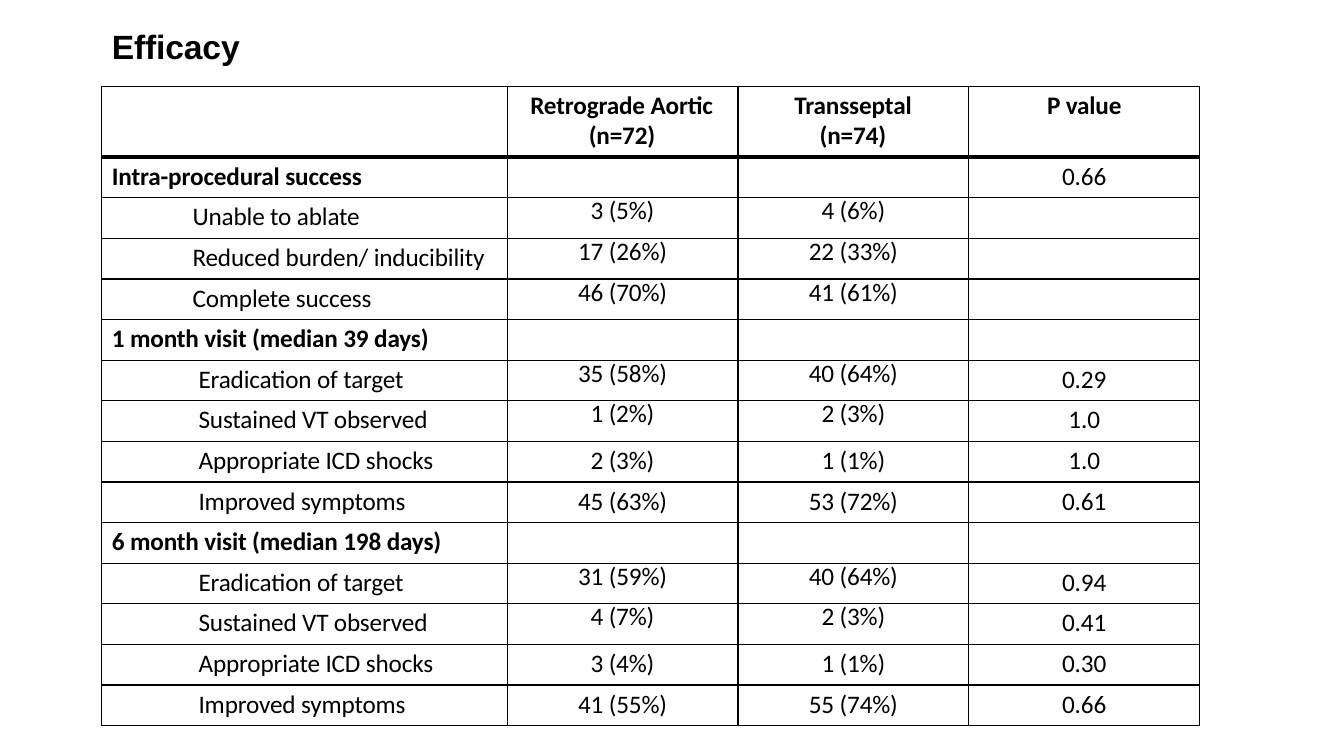
"""Build the Efficacy slide: a heading above a table of ablation outcomes."""
from lxml import etree
from pptx import Presentation
from pptx import util as u
from pptx.dml.color import RGBColor
from pptx.enum import text
from pptx.oxml import ns

BLACK = RGBColor(0x00, 0x00, 0x00)
HEADER_HEIGHT = 0.7
LABEL_WIDTH, VALUE_WIDTH = 4.02, 2.29
SECTION_INDENT, FINDING_INDENT, VISIT_INDENT = 0.1, 0.9, 0.96

HEADERS = [
    ("Retrograde Aortic (n=72)", 0.81, -0.58),
    ("Transseptal (n=74)", 0.81, -0.25),
]
OUTCOMES = [
    (SECTION_INDENT, "Intra-procedural success", "", "", "0.66"),
    (FINDING_INDENT, "Unable to ablate", "3 (5%)", "4 (6%)", ""),
    (FINDING_INDENT, "Reduced burden/ inducibility", "17 (26%)", "22 (33%)", ""),
    (FINDING_INDENT, "Complete success", "46 (70%)", "41 (61%)", ""),
    (SECTION_INDENT, "1 month visit (median 39 days)", "", "", ""),
    (VISIT_INDENT, "Eradication of target", "35 (58%)", "40 (64%)", "0.29"),
    (VISIT_INDENT, "Sustained VT observed", "1 (2%)", "2 (3%)", "1.0"),
    (VISIT_INDENT, "Appropriate ICD shocks", "2 (3%)", "1 (1%)", "1.0"),
    (VISIT_INDENT, "Improved symptoms", "45 (63%)", "53 (72%)", "0.61"),
    (SECTION_INDENT, "6 month visit (median 198 days)", "", "", ""),
    (VISIT_INDENT, "Eradication of target", "31 (59%)", "40 (64%)", "0.94"),
    (VISIT_INDENT, "Sustained VT observed", "4 (7%)", "2 (3%)", "0.41"),
    (VISIT_INDENT, "Appropriate ICD shocks", "3 (4%)", "1 (1%)", "0.30"),
    (VISIT_INDENT, "Improved symptoms", "41 (55%)", "55 (74%)", "0.66"),
]
MID_ROW_LABELS = ("Appropriate ICD shocks", "Improved symptoms")


def write(para, words, size, font, bold=False, indent=None, first=0):
    """Add one styled run, with a left or hanging indent or else centred."""
    if indent is None:
        para.alignment = text.PP_ALIGN.CENTER
    else:
        para.alignment = text.PP_ALIGN.LEFT
        props = para._p.get_or_add_pPr()
        props.set("marL", str(u.Inches(indent)))
        props.set("indent", str(u.Inches(first)))
    span = para.add_run()
    span.text = words
    span.font.size = u.Pt(size)
    span.font.name = font
    span.font.bold = bold
    span.font.color.rgb = BLACK
    span.font._element.set("spc", "-10")


def style_cell(cell, top=1, bottom=1):
    """Clear a cell's fill and margins and rule its four edges."""
    props = cell._tc.get_or_add_tcPr()
    for edge, points in (("L", 1), ("R", 1), ("T", top), ("B", bottom)):
        line = etree.SubElement(props, ns.qn(f"a:ln{edge}"), w=str(u.Pt(points)))
        fill = etree.SubElement(line, ns.qn("a:solidFill"))
        etree.SubElement(fill, ns.qn("a:srgbClr"), val=str(BLACK))
    cell.fill.background()
    cell.margin_left = cell.margin_right = cell.margin_bottom = 0
    cell.margin_top = 0


def fill_cell(cell, words, bold=False, indent=None, first=0, spacing=None):
    """Write a cell's words, flush to the top when an exact spacing is given."""
    if not words:
        return
    para = cell.text_frame.paragraphs[0]
    if spacing:
        para.line_spacing = u.Pt(spacing)
    else:
        cell.margin_top = u.Inches(0.04)
        para.space_before = u.Pt(2.6)
    write(para, words, 18, "Calibri", bold, indent, first)


def add_heading(page, left, top, width, height):
    """Place the slide heading in the given box."""
    box = page.shapes.add_textbox(*map(u.Inches, (left, top, width, height)))
    frame = box.text_frame
    frame.word_wrap = True
    frame.margin_left = frame.margin_right = frame.margin_bottom = 0
    frame.margin_top = u.Inches(0.01)
    para = frame.paragraphs[0]
    para.space_before = u.Pt(1)
    write(para, "Efficacy", 24, "Arial", True, indent=0.01)


def add_outcomes(page, left, top, width, height):
    """Place the outcome table in the given box."""
    bounds = map(u.Inches, (left, top, width, height))
    table = page.shapes.add_table(len(OUTCOMES) + 1, 4, *bounds).table
    table.first_row = table.horz_banding = False
    for index, column in enumerate(table.columns):
        column.width = u.Inches(VALUE_WIDTH if index else LABEL_WIDTH)
    body_height = (height - HEADER_HEIGHT) / len(OUTCOMES)
    for index, row in enumerate(table.rows):
        row.height = u.Inches(body_height if index else HEADER_HEIGHT)
        for cell in row.cells:
            style_cell(cell, 3 if index == 1 else 1, 1 if index else 3)

    for column, (words, indent, first) in enumerate(HEADERS, 1):
        cell = table.cell(0, column)
        fill_cell(cell, words, True, indent, first, spacing=21.1)
        cell.margin_top = u.Inches(0.05)
        cell.text_frame.paragraphs[0].space_before = u.Pt(3.6)
    fill_cell(table.cell(0, 3), "P value", True)

    for index, (indent, label, aortic, transseptal, p_value) in enumerate(OUTCOMES, 1):
        spacing = None if label in MID_ROW_LABELS else 20.6
        fill_cell(table.cell(index, 0), label, indent == SECTION_INDENT, indent)
        fill_cell(table.cell(index, 1), aortic, spacing=spacing)
        fill_cell(table.cell(index, 2), transseptal, spacing=spacing)
        fill_cell(table.cell(index, 3), p_value)


def main():
    """Create and save the deck."""
    deck = Presentation()
    deck.slide_width, deck.slide_height = u.Inches(13.33), u.Inches(7.5)
    page = deck.slides.add_slide(deck.slide_layouts[6])
    add_outcomes(page, 1.01, 0.86, LABEL_WIDTH + 3 * VALUE_WIDTH, 6.34)
    add_heading(page, 1.1, 0.25, 1.31, 0.43)
    deck.save("out.pptx")


if __name__ == "__main__":
    main()
